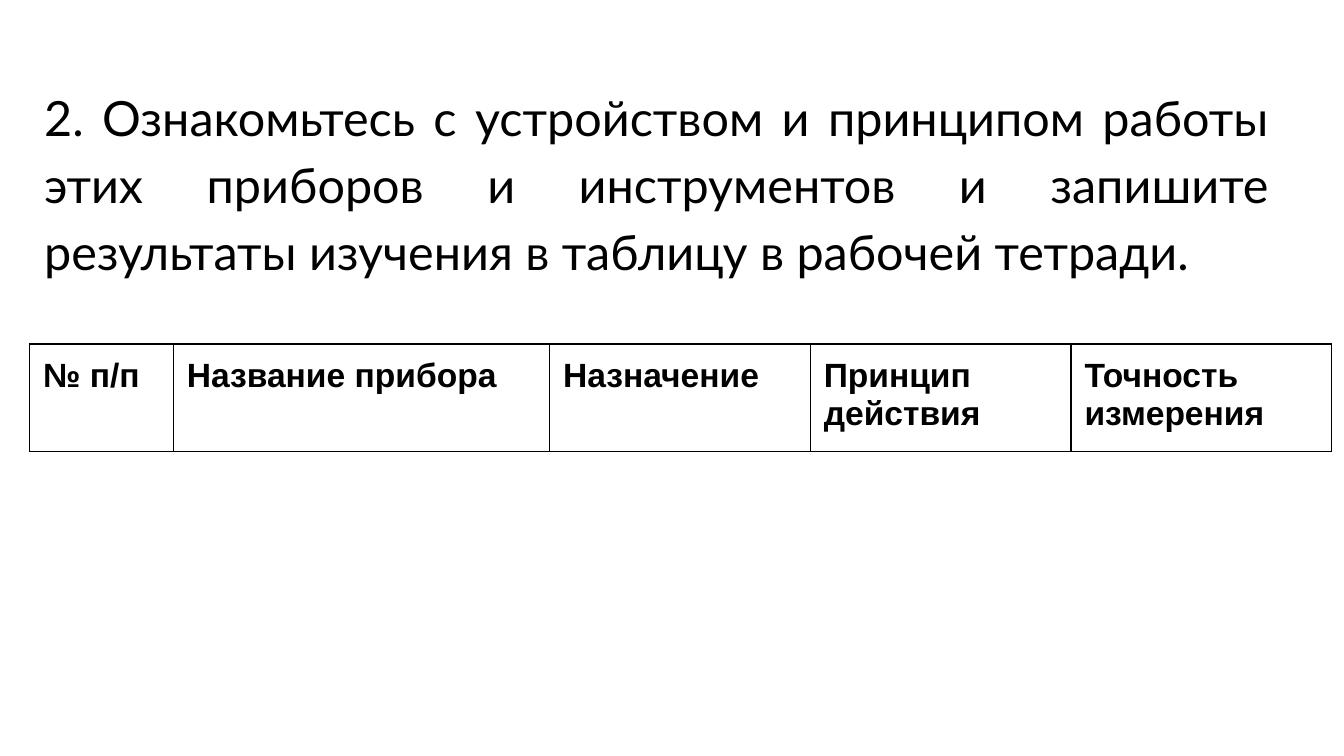
from dataclasses import dataclass

from lxml import etree
from pptx import Presentation
from pptx import util as u
from pptx.dml.color import RGBColor
from pptx.enum import text
from pptx.oxml.ns import qn


@dataclass(frozen=True)
class Theme:
    ink: str = "000000"
    paper: str = "FFFFFF"
    task_font: str = "Lato"
    table_font: str = "Arial"
    task_size: int = 26
    header_size: int = 18
    border: float = 0.75
    inset: float = 0.1


THEME = Theme()
TASK = (
    "2. Ознакомьтесь с устройством и принципом работы этих приборов и "
    "инструментов и запишите результаты изучения в таблицу в рабочей тетради."
)
COLUMNS = [
    ("№ п/п", 1.07),
    ("Название прибора", 2.8),
    ("Назначение", 1.94),
    ("Принцип действия", 1.94),
    ("Точность измерения", 1.94),
]
ROW_HEIGHTS = [0.23, 0.43]


def style_span(span, font, size, bold=False):
    span.font.name = font
    span.font.size = u.Pt(size)
    span.font.bold = bold
    span.font.color.rgb = RGBColor.from_string(THEME.ink)


def set_insets(holder):
    inset = u.Inches(THEME.inset)
    holder.margin_left = holder.margin_right = inset
    holder.margin_top = holder.margin_bottom = inset


def set_borders(cell, visible):
    properties = cell._tc.get_or_add_tcPr()
    for side in "LRTB":
        line = etree.SubElement(properties, qn(f"a:ln{side}"))
        if side in visible:
            line.set("w", str(u.Pt(THEME.border)))
            fill = etree.SubElement(line, qn("a:solidFill"))
            etree.SubElement(fill, qn("a:srgbClr")).set("val", THEME.ink)
        else:
            etree.SubElement(line, qn("a:noFill"))


def add_task(page, left, top, width, height):
    box = page.shapes.add_textbox(*map(u.Inches, (left, top, width, height)))
    frame = box.text_frame
    frame.word_wrap = True
    set_insets(frame)
    frame.text = TASK
    para = frame.paragraphs[0]
    para.alignment = text.PP_ALIGN.JUSTIFY
    para.line_spacing = 1.15
    para.space_after = u.Pt(12)
    style_span(para.runs[0], THEME.task_font, THEME.task_size)


def add_instrument_table(page, left, top):
    width = sum(column_width for _, column_width in COLUMNS)
    place = map(u.Inches, (left, top, width, sum(ROW_HEIGHTS)))
    table = page.shapes.add_table(len(ROW_HEIGHTS), len(COLUMNS), *place).table
    table.first_row = table.horz_banding = False
    for row, height in zip(table.rows, ROW_HEIGHTS):
        row.height = u.Inches(height)
    for index, (title, column_width) in enumerate(COLUMNS):
        table.columns[index].width = u.Inches(column_width)
        header, blank = table.cell(0, index), table.cell(1, index)
        for cell, visible in ((header, "LRTB"), (blank, "T")):
            set_insets(cell)
            set_borders(cell, visible)
            cell.fill.solid()
            cell.fill.fore_color.rgb = RGBColor.from_string(THEME.paper)
        header.text_frame.text = title
        span = header.text_frame.paragraphs[0].runs[0]
        style_span(span, THEME.table_font, THEME.header_size, bold=True)


def main():
    deck = Presentation()
    deck.slide_width = u.Inches(10)
    deck.slide_height = deck.slide_width * 9 // 16
    page = deck.slides.add_slide(deck.slide_layouts[6])
    add_task(page, 0.23, 0.49, 9.32, 1.55)
    add_instrument_table(page, 0.22, 2.56)
    deck.save("out.pptx")


if __name__ == "__main__":
    main()
